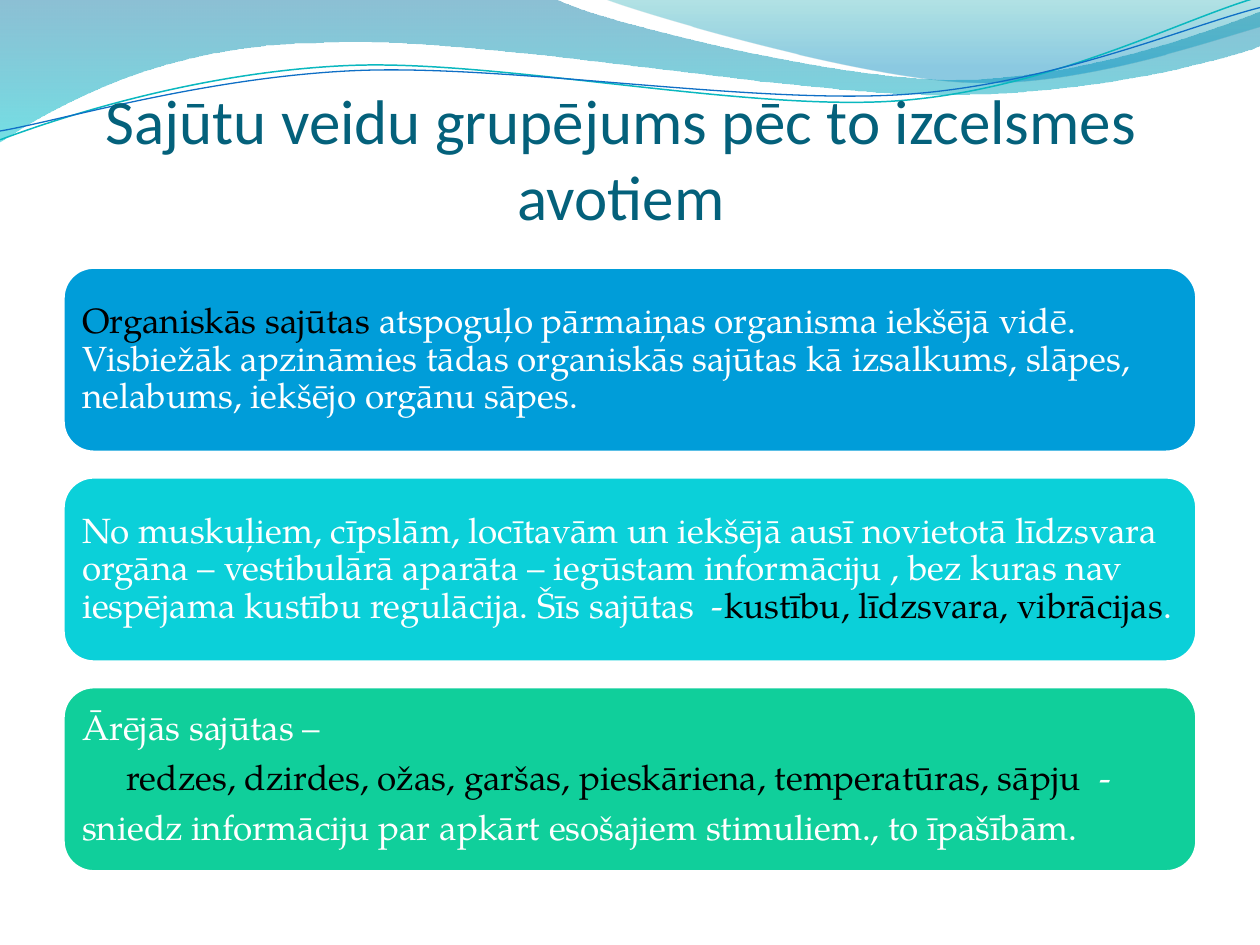
from math import cos, radians, sin

from lxml.etree import SubElement
from pptx import Presentation
from pptx.dml.color import RGBColor
from pptx.enum.shapes import MSO_SHAPE
from pptx.enum.text import MSO_ANCHOR, PP_ALIGN
from pptx.oxml.ns import qn
from pptx.util import Inches, Pt

BLACK, WHITE = "000000", "FFFFFF"
TILT = -2.7

# Each wave is a list of steps: one pair is a line, three pairs are a curve.
BANDS = [
    ([(0, -0.01), (4.4, -0.01),
      (4.76, 0.17, 6.64, 0.63, 7.58, 0.63), (8.53, 0.63, 9.58, 0.26, 10, 0.09),
      (10.01, 0.36),
      (9.83, 0.44, 8.7, 0.76, 7.46, 0.75), (6.22, 0.75, 3.82, 0.28, 2.57, 0.34),
      (1.29, 0.35, 0.46, 0.83, -0.01, 1.13)],
     [(0, "0074A1", 45), (1, "00C6CF", 55)]),
    ([(4.79, -0.01),
      (5.09, 0.11, 6.82, 0.62, 7.69, 0.65), (8.56, 0.69, 9.61, 0.32, 10, 0.21),
      (10, 0)],
     [(0, "00A1A9", 30), (0.8, "008BBF", 45)]),
]
LINES = [
    ([(0, 1.11), (0.48, 0.93, 1.58, 0.57, 2.77, 0.52),
      (3.95, 0.47, 5.93, 0.89, 7.13, 0.8), (8.33, 0.71, 9.38, 0.15, 9.98, -0.02)],
     "0AB8BF", 0.85),
    ([(0, 1.04), (0.47, 0.96, 1.64, 0.61, 2.83, 0.56),
      (4.03, 0.51, 5.97, 0.83, 7.17, 0.75), (8.36, 0.67, 9.41, 0.21, 10, 0.06)],
     "0F6FC6", 0.75),
]

# Each card is a fill and its paragraphs: an indent and coloured runs.
CARDS = [
    ("009DD9", [
        (0, [("Organiskās sajūtas ", BLACK),
             ("atspoguļo pārmaiņas organisma iekšējā vidē. Visbiežāk apzināmies "
              "tādas organiskās sajūtas kā izsalkums, slāpes, nelabums, iekšējo "
              "orgānu sāpes.", WHITE)])]),
    ("0BD0D9", [
        (0, [("No muskuļiem, cīpslām, locītavām un iekšējā ausī novietotā līdzsvara "
              "orgāna – vestibulārā aparāta – iegūstam informāciju , bez kuras nav "
              "iespējama kustību regulācija. Šīs sajūtas  -", WHITE),
             ("kustību, līdzsvara, vibrācijas", BLACK), (".", WHITE)])]),
    ("10CF9B", [
        (0, [("Ārējās sajūtas –", WHITE)]),
        (0.35, [("redzes, dzirdes, ožas, garšas, pieskāriena, temperatūras, sāpju  ",
                 BLACK), ("-", WHITE)]),
        (0, [("sniedz informāciju par apkārt esošajiem stimuliem., to īpašībām.",
              WHITE)])]),
]


def rgb(code):
    return RGBColor.from_string(code)


def pairs(step):
    return list(zip(step[::2], step[1::2]))


def turn(steps, angle, mid):
    """Rotate all points clockwise about a middle point."""
    c, s = cos(radians(angle)), sin(radians(angle))
    mx, my = mid
    return [[value for x, y in pairs(step)
             for value in (mx + (x - mx) * c - (y - my) * s,
                           my + (x - mx) * s + (y - my) * c)]
            for step in steps]


def add_path(slide, steps, close):
    """Join the end points by lines, then bend the lines that are curves."""
    ends = [(Inches(step[-2]), Inches(step[-1])) for step in steps]
    pen = slide.shapes.build_freeform(*ends[0])
    pen.add_line_segments(ends[1:], close=close)
    shape = pen.convert_to_shape()
    shape.shadow.inherit = False
    sides = list(shape.element.spPr.iter(qn("a:lnTo")))
    for side, step in zip(sides, steps[1:]):
        if len(step) == 2:
            continue
        side.tag = qn("a:cubicBezTo")
        side.remove(side[0])
        for x, y in pairs(step):
            point = SubElement(side, qn("a:pt"))
            point.set("x", str(Inches(x) - shape.left))
            point.set("y", str(Inches(y) - shape.top))
    return shape


def add_band(slide, steps, stops):
    band = add_path(slide, steps, True)
    band.line.fill.background()
    band.fill.gradient()
    band.fill.gradient_angle = 270
    for stop, (place, code, _) in zip(band.fill.gradient_stops, stops):
        stop.position = place
        stop.color.rgb = rgb(code)
    tones = list(band.element.spPr.iter(qn("a:srgbClr")))
    for tone, (_, _, alpha) in zip(tones, stops):
        SubElement(tone, qn("a:alpha")).set("val", str(alpha * 1000))


def add_waves(slide):
    for steps, stops in BANDS:
        add_band(slide, steps, stops)
    for steps, code, width in LINES:
        line = add_path(slide, turn(steps, -TILT, (4.99, 0.58)), False)
        line.rotation = TILT
        line.fill.background()
        line.line.color.rgb = rgb(code)
        line.line.width = Pt(width)


def set_title(slide, left, top, width, height):
    title = slide.shapes.title
    title.left, title.top = Inches(left), Inches(top)
    title.width, title.height = Inches(width), Inches(height)
    frame = title.text_frame
    frame.text = "Sajūtu veidu grupējums pēc to izcelsmes avotiem"
    frame.word_wrap = True
    frame.vertical_anchor = MSO_ANCHOR.TOP
    frame.margin_left = frame.margin_right = frame.margin_bottom = 0
    frame.margin_top = Inches(0.52)
    para = frame.paragraphs[0]
    para.alignment = PP_ALIGN.CENTER
    font = para.runs[0].font
    font.name, font.size = "Calibri", Pt(36)
    font.color.rgb = rgb("04617B")
    # The title lies in front of the waves.
    slide.shapes.element.append(title.element)


def add_card(slide, left, top, width, height, fill, paras):
    card = slide.shapes.add_shape(MSO_SHAPE.ROUNDED_RECTANGLE, Inches(left),
                                  Inches(top), Inches(width), Inches(height))
    card.shadow.inherit = False
    card.fill.solid()
    card.fill.fore_color.rgb = rgb(fill)
    card.line.color.rgb = rgb(WHITE)
    card.line.width = Pt(2)
    frame = card.text_frame
    frame.word_wrap = True
    frame.vertical_anchor = MSO_ANCHOR.MIDDLE
    frame.margin_left = frame.margin_right = Inches(0.08)
    frame.margin_top = frame.margin_bottom = Inches(0.08)
    for i, (indent, runs) in enumerate(paras):
        para = frame.add_paragraph() if i else frame.paragraphs[0]
        para.alignment = PP_ALIGN.LEFT
        para.line_spacing = 0.9
        para.space_after = Pt(7)
        if indent:
            para._p.get_or_add_pPr().set("marL", str(Inches(indent)))
        for text, code in runs:
            run = para.add_run()
            run.text = text
            run.font.name, run.font.size = "TeX Gyre Pagella", Pt(20)
            run.font.color.rgb = rgb(code)


def add_cards(slide, left, top, width, height):
    tall = 1.47
    pitch = (height - tall) / (len(CARDS) - 1)
    for i, (fill, paras) in enumerate(CARDS):
        add_card(slide, left, top + i * pitch, width, tall, fill, paras)


def main():
    deck = Presentation()
    deck.slide_width, deck.slide_height = Inches(10), Inches(7.5)
    slide = deck.slides.add_slide(deck.slide_layouts[5])
    add_waves(slide)
    set_title(slide, 0.43, 0.13, 9, 1.66)
    add_cards(slide, 0.5, 2.12, 9, 4.8)
    deck.save("out.pptx")


if __name__ == "__main__":
    main()
